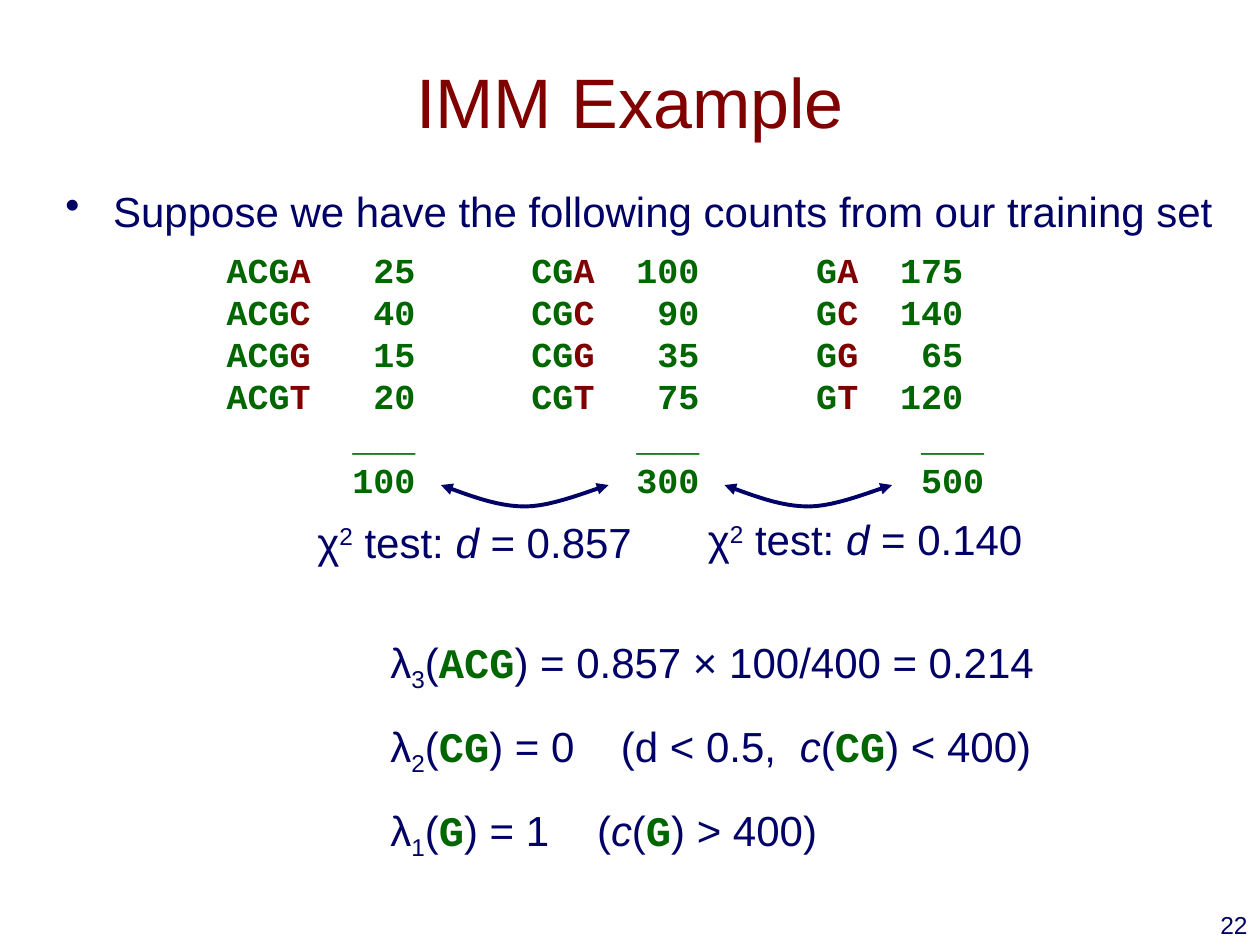
from typing import NamedTuple

from lxml import etree
from pptx import Presentation
from pptx.dml.color import RGBColor
from pptx.enum import text as txt
from pptx.oxml import ns
from pptx.util import Inches, Pt

COLORS = {"navy": "000066", "green": "006600", "red": "800000"}
CHAR = 1 / 6  # width in inches of one 20 pt Courier New letter
PAD = 0.1


class Style(NamedTuple):
    color: str = "navy"
    font: str = "Arial"
    bold: bool = False
    italic: bool = False
    shift: int = 0


BODY = Style()
VAR = Style(italic=True)
SUP = Style(shift=30000)
SUB = Style(shift=-25000)
CODE = Style("green", "Courier New", True)
NEXT = CODE._replace(color="red")

Runs = list[tuple[str, Style]]


class Counts(NamedTuple):
    left: float
    width: float
    prefix: str
    values: list[int]
    end: int  # letters up to the right edge of the counts
    total: int
    sum_end: int


class Test(NamedTuple):
    curve: float
    left: float
    top: float
    width: float
    score: str


class Weight(NamedTuple):
    width: float
    order: str
    code: str
    rest: Runs
    tabs: list[float]


COUNTS = [
    Counts(1.7, 1.7, "ACG", [25, 40, 15, 20], 9, 100, 9),
    Counts(4.12, 1.53, "CG", [100, 90, 35, 75], 8, 300, 8),
    Counts(6.38, 1.53, "G", [175, 140, 65, 120], 7, 500, 8),
]
TESTS = [
    Test(3.5, 2.42, 4.05, 2.81, "0.857"),
    Test(5.75, 5.52, 4.03, 2.74, "0.140"),
]
WEIGHTS = [
    Weight(5.39, "3", "ACG", [(") = 0.857 × 100/400 = 0.214", BODY)], []),
    Weight(5.59, "2", "CG", [(") = 0\t(d < 0.5,\t", BODY), ("c", VAR), ("(", BODY),
                             ("CG", CODE), (") < 400)", BODY)], [1.83, 3.25]),
    Weight(3.84, "1", "G", [(") = 1\t(", BODY), ("c", VAR), ("(", BODY),
                            ("G", CODE), (") > 400)", BODY)], [1.64]),
]
BENDS = [
    [(0, 0), (0.22, 0.08), (0.44, 0.17), (0.67, 0.17)],
    [(0.67, 0.17), (0.89, 0.17), (1.22, 0.03), (1.33, 0)],
]


def paint(run, style: Style, size: float) -> None:
    font = run.font
    font.name, font.size = style.font, Pt(size)
    font.bold, font.italic = style.bold, style.italic
    font.color.rgb = RGBColor.from_string(COLORS[style.color])
    if style.shift:
        run._r.get_or_add_rPr().set("baseline", str(style.shift))


def add_runs(para, runs: Runs, size: float) -> None:
    for words, style in runs:
        run = para.add_run()
        run.text = words
        paint(run, style, size)


def add_tabs(para, stops: list[float], align: str = "l") -> None:
    tabs = etree.SubElement(para._p.get_or_add_pPr(), ns.qn("a:tabLst"))
    for stop in stops:
        etree.SubElement(tabs, ns.qn("a:tab"), pos=str(Inches(stop)), algn=align)


def add_box(shapes, left: float, top: float, width: float, height: float):
    """Add a wrapping text box and return its text frame."""
    box = shapes.add_textbox(*map(Inches, (left, top, width, height)))
    box.text_frame.word_wrap = True
    return box.text_frame


def add_line(shapes, left: float, top: float, width: float, runs: Runs):
    para = add_box(shapes, left, top, width, 0.5).paragraphs[0]
    add_runs(para, runs, 24)
    return para


def add_counts(shapes, col: Counts) -> None:
    frame = add_box(shapes, col.left, 1.92, col.width, 2.1)
    frame.margin_right = 0
    rows = [([(col.prefix, CODE), (base, NEXT), (f"\t{value}", CODE)], col.end)
            for base, value in zip("ACGT", col.values)]
    rows += [([(f"\t{foot}", CODE)], col.sum_end) for foot in ("___", col.total)]
    for i, (runs, end) in enumerate(rows):
        para = frame.add_paragraph() if i else frame.paragraphs[0]
        add_tabs(para, [end * CHAR], "r")
        add_runs(para, runs, 20)


def bezier(ends: list, t: float) -> tuple[float, float]:
    parts = [(1 - t) ** 3, 3 * t * (1 - t) ** 2, 3 * t * t * (1 - t), t ** 3]
    return tuple(sum(p * e[axis] for p, e in zip(parts, ends)) for axis in (0, 1))


def add_curve(shapes, left: float, top: float) -> None:
    """Add a hanging curve with an arrowhead at each end."""
    steps = 12
    dots = [bezier(bend, i / steps) for bend in BENDS for i in range(1, steps + 1)]
    pen = shapes.build_freeform(Inches(left), Inches(top))
    pen.add_line_segments([(Inches(left + x), Inches(top + y)) for x, y in dots],
                          close=False)
    curve = pen.convert_to_shape()
    curve.shadow.inherit = False
    curve.fill.background()
    curve.line.color.rgb = RGBColor.from_string(COLORS["navy"])
    curve.line.width = Pt(2.25)
    for tip in ("a:headEnd", "a:tailEnd"):
        etree.SubElement(curve.line._get_or_add_ln(), ns.qn(tip), type="triangle")


def add_test(shapes, test: Test) -> None:
    group = shapes.add_group_shape().shapes
    add_curve(group, test.curve, 3.85)
    add_line(group, test.left, test.top, test.width,
             [("χ", BODY), ("2", SUP), (" test: ", BODY), ("d", VAR),
              (f" = {test.score}", BODY)])


def add_title(slide) -> None:
    title = slide.shapes.title
    title.left, title.top, title.width, title.height = map(
        Inches, (0.75, 0.17, 8.5, 1.25))
    frame = title.text_frame
    frame.text = "IMM Example"
    frame.vertical_anchor = txt.MSO_ANCHOR.MIDDLE
    para = frame.paragraphs[0]
    para.alignment = txt.PP_ALIGN.CENTER
    paint(para.runs[0], Style("red"), 40)


def add_lead(shapes) -> None:
    para = add_line(shapes, 0.42, 1.42, 9.33,
                    [("Suppose we have the following counts from our training set", BODY)])
    props = para._p.get_or_add_pPr()
    props.set("marL", str(Inches(0.38)))
    props.set("indent", str(Inches(-0.38)))
    etree.SubElement(props, ns.qn("a:buChar"), char="•")


def main() -> None:
    deck = Presentation()
    deck.slide_width, deck.slide_height = Inches(10), Inches(7.5)
    slide = deck.slides.add_slide(deck.slide_layouts[5])
    shapes = slide.shapes
    add_title(slide)
    for col in COUNTS:
        add_counts(shapes, col)
    add_lead(shapes)
    for test in TESTS:
        add_test(shapes, test)
    for i, item in enumerate(WEIGHTS):
        runs = [("λ", BODY), (item.order, SUB), ("(", BODY), (item.code, CODE)]
        para = add_line(shapes, 3, 5 + i * 2 / 3, item.width, runs + item.rest)
        if item.tabs:
            add_tabs(para, item.tabs)
    page = add_box(shapes, 7.92, 7.17, 2.08, 0.5).paragraphs[0]
    page.alignment = txt.PP_ALIGN.RIGHT
    add_runs(page, [("22", BODY)], 14)
    deck.save("out.pptx")


if __name__ == "__main__":
    main()
